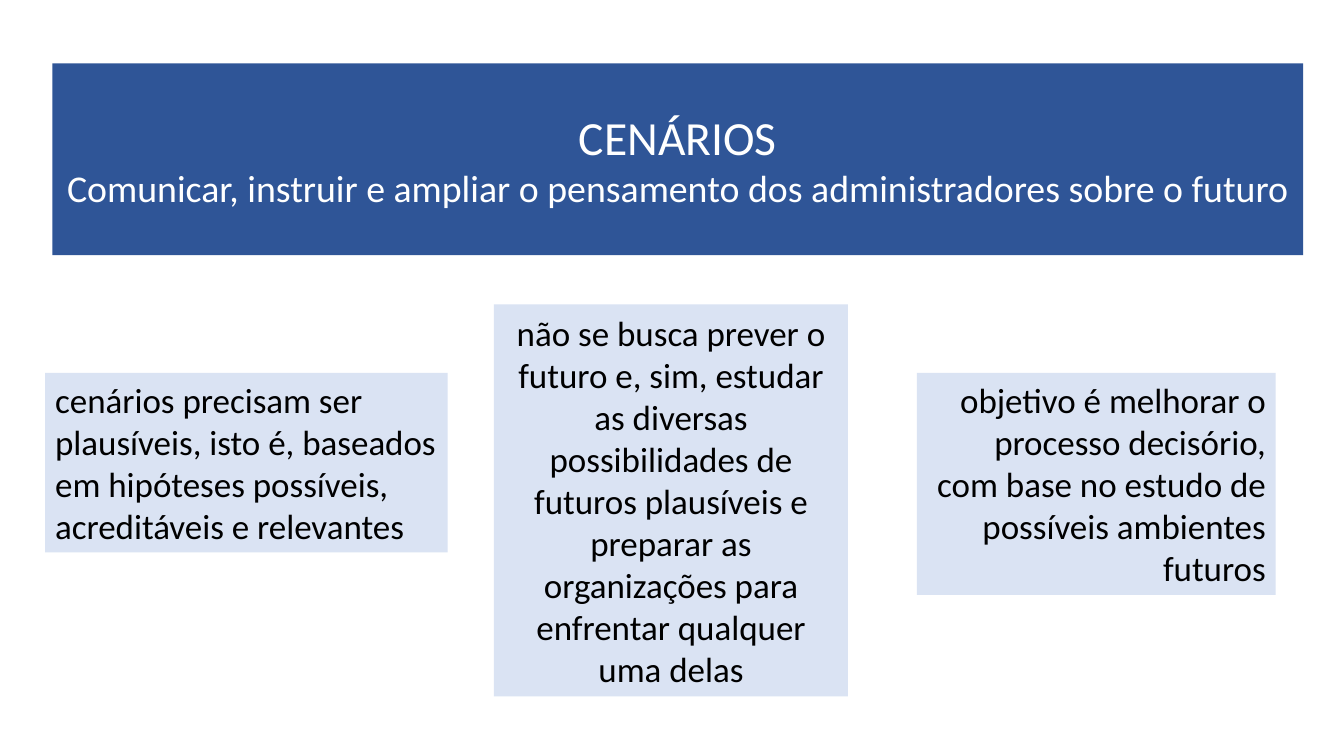
from pptx import Presentation
from pptx.dml.color import RGBColor
from pptx.enum.shapes import MSO_SHAPE
from pptx.enum.text import MSO_ANCHOR, PP_ALIGN
from pptx.util import Cm, Pt


def color(hex_string):
    return RGBColor.from_string(hex_string)


def add_box(slide, position, fill, text_color, alignment, lines):
    """Add a filled rectangle; lines holds one (text, size) pair per paragraph."""
    shape = slide.shapes.add_shape(MSO_SHAPE.RECTANGLE, *[Cm(value) for value in position])
    shape.shadow.inherit = False
    shape.fill.solid()
    shape.fill.fore_color.rgb = color(fill)
    shape.line.fill.background()
    frame = shape.text_frame
    frame.word_wrap = True
    frame.vertical_anchor = MSO_ANCHOR.MIDDLE
    for index, (text, size) in enumerate(lines):
        paragraph = frame.add_paragraph() if index else frame.paragraphs[0]
        paragraph.alignment = alignment
        run = paragraph.add_run()
        run.text = text
        run.font.name = "Calibri"
        run.font.size = Pt(size)
        run.font.color.rgb = color(text_color)


presentation = Presentation()
presentation.slide_width = Cm(33.87)
presentation.slide_height = Cm(19.05)
slide = presentation.slides.add_slide(presentation.slide_layouts[6])

add_box(slide, (1.32, 1.6, 31.52, 4.83), "2F5597", "FFFFFF", PP_ALIGN.CENTER, [
    ("CENÁRIOS", 34),
    ("Comunicar, instruir e ampliar o pensamento dos administradores sobre o futuro", 27),
])

principles = [
    ((1.14, 9.4, 10.14, 4.52), PP_ALIGN.LEFT,
     "cenários precisam ser plausíveis, isto é, baseados em hipóteses possíveis, "
     "acreditáveis e relevantes"),
    ((12.45, 7.67, 8.92, 9.88), PP_ALIGN.CENTER,
     "não se busca prever o futuro e, sim, estudar as diversas possibilidades de "
     "futuros plausíveis e preparar as organizações para enfrentar qualquer uma delas"),
    ((23.11, 9.4, 9.04, 5.59), PP_ALIGN.RIGHT,
     "objetivo é melhorar o processo decisório, com base no estudo de possíveis "
     "ambientes futuros"),
]
for position, alignment, text in principles:
    add_box(slide, position, "DAE3F3", "000000", alignment, [(text, 25)])

presentation.save("out.pptx")
